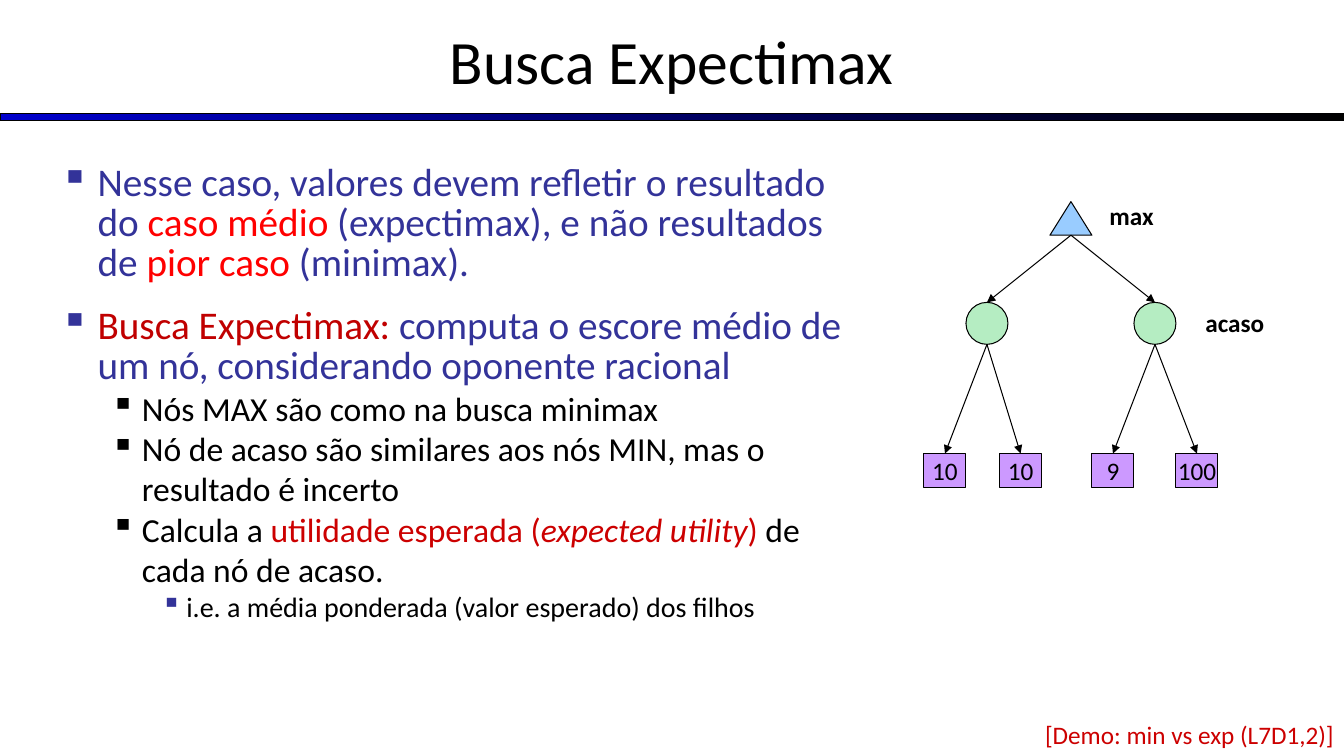
import pptx
import pptx.dml.color
import pptx.enum.dml
import pptx.enum.shapes
import pptx.enum.text
import pptx.oxml
import pptx.oxml.ns
import pptx.util

FONT = "Calibri"
BLACK, BLUE, RED, DARK_RED, CRIMSON = "000000", "333399", "FF0000", "C00000", "CC0000"
SHAPE = pptx.enum.shapes.MSO_SHAPE
ALIGN = pptx.enum.text.PP_ALIGN
ANCHOR = pptx.enum.text.MSO_ANCHOR

# The slide is a grid of 160 columns by 90 rows
COLUMNS, ROWS = 160, 90
NODE_WIDTH, NODE_HEIGHT = 5, 4
MAX_NODE = (125, 24)
CHANCE_ROW, LEAF_ROW = 36, 54
# Left column of each chance node, with its leaves as (left column, value)
CHANCE_NODES = [
    (115, [(110, "10"), (119, "10")]),
    (135, [(130, "9"), (140, "100")]),
]

# Indent, hanging and size of each list level
LEVELS = [(0.37, 0.37, 28), (0.81, 0.31, 24), (1.25, 0.25, 20)]
# Level, bullet colour, space before, spans of (text, colour, italic)
BODY = [
    (0, BLUE, 0, [
        ("Nesse caso, valores devem refletir o resultado do ", BLUE, False),
        ("caso médio", RED, False),
        (" (expectimax), e não resultados de ", BLUE, False),
        ("pior caso", RED, False),
        (" (minimax).", BLUE, False)]),
    (0, BLUE, 16.5, [
        ("Busca Expectimax:", DARK_RED, False),
        (" computa o escore médio de um nó, considerando oponente racional", BLUE, False)]),
    (1, BLACK, 0, [("Nós MAX são como na busca minimax", BLACK, False)]),
    (1, BLACK, 0, [
        ("Nó de acaso são similares aos nós MIN, mas o resultado é incerto", BLACK, False)]),
    (1, BLACK, 0, [
        ("Calcula a ", BLACK, False),
        ("utilidade esperada (", CRIMSON, False),
        ("expected utility", CRIMSON, True),
        (") ", CRIMSON, False),
        ("de cada nó de acaso.", BLACK, False)]),
    (2, BLUE, 0, [("i.e. a média ponderada (valor esperado) dos filhos", BLACK, False)]),
]


def grid(*cells):
    return [pptx.util.Inches(cell / 12) for cell in cells]


def rgb(value):
    return pptx.dml.color.RGBColor.from_string(value)


def add_xml(parent, tag, **attributes):
    element = pptx.oxml.parse_xml(f"<a:{tag} {pptx.oxml.ns.nsdecls('a')}/>")
    for name, value in attributes.items():
        element.set(name, value)
    parent.append(element)
    return element


def style(span, size, color, bold=False, italic=False):
    span.font.name = FONT
    span.font.size = pptx.util.Pt(size)
    span.font.bold = bold
    span.font.italic = italic
    span.font.color.rgb = rgb(color)


def write(frame, text, size, color=BLACK, align=ALIGN.CENTER, bold=False):
    frame.text = text
    frame.vertical_anchor = ANCHOR.MIDDLE
    para = frame.paragraphs[0]
    para.alignment = align
    style(para.runs[0], size, color, bold)


def add_text(page, area, text, size, **look):
    box = page.shapes.add_textbox(*grid(*area))
    box.text_frame.word_wrap = True
    write(box.text_frame, text, size, **look)


def add_outlined(page, kind, area, color=None):
    shape = page.shapes.add_shape(kind, *grid(*area))
    shape.shadow.inherit = False
    shape.line.color.rgb = rgb(BLACK)
    shape.line.width = pptx.util.Pt(0.75)
    if color:
        shape.fill.solid()
        shape.fill.fore_color.rgb = rgb(color)
    return shape


def add_rule(page):
    rule = add_outlined(page, SHAPE.RECTANGLE, (0, 13.5, COLUMNS, 0.9))
    rule.fill.gradient()
    rule.fill.gradient_angle = 0
    for stop, color in zip(rule.fill.gradient_stops, ("0000CC", BLACK)):
        stop.color.rgb = rgb(color)


def add_arrow(page, start, end):
    arrow = page.shapes.add_connector(
        pptx.enum.shapes.MSO_CONNECTOR.STRAIGHT, *grid(*start, *end))
    arrow.line.color.rgb = rgb(BLACK)
    arrow.line.width = pptx.util.Pt(0.75)
    properties = arrow.line._get_or_add_ln()
    add_xml(properties, "tailEnd", type="triangle")
    add_xml(properties.getparent(), "effectLst")


def add_leaf(page, column, value):
    area = (column, LEAF_ROW, NODE_WIDTH, NODE_HEIGHT)
    leaf = add_outlined(page, SHAPE.RECTANGLE, area, "CC99FF")
    write(leaf.text_frame, value, 18)
    leaf.text_frame.word_wrap = False


def add_body(page):
    frame = page.shapes.add_textbox(*grid(6, 19, 98, 64)).text_frame
    frame.word_wrap = True
    for index, (level, bullet, gap, spans) in enumerate(BODY):
        para = frame.add_paragraph() if index else frame.paragraphs[0]
        indent, hanging, size = LEVELS[level]
        para.level = level
        para.line_spacing = 1.0 if level else 0.85
        para.space_before = pptx.util.Pt(gap)
        properties = para._p.get_or_add_pPr()
        properties.set("marL", str(pptx.util.Inches(indent)))
        properties.set("indent", str(-pptx.util.Inches(hanging)))
        add_xml(add_xml(properties, "buClr"), "srgbClr", val=bullet)
        add_xml(properties, "buChar", char="▪")
        for text, color, italic in spans:
            span = para.add_run()
            span.text = text
            style(span, size, color, italic=italic)


def add_tree(page):
    middle = NODE_WIDTH / 2
    column, row = MAX_NODE
    add_outlined(page, SHAPE.ISOSCELES_TRIANGLE,
                 (column, row, NODE_WIDTH, NODE_HEIGHT), "99CCFF")
    root = (column + middle, row + NODE_HEIGHT)
    for chance, leaves in CHANCE_NODES:
        center = chance + middle
        add_arrow(page, root, (center, CHANCE_ROW))
        for leaf, value in leaves:
            add_arrow(page, (center, CHANCE_ROW + NODE_WIDTH), (leaf + middle, LEAF_ROW))
            add_leaf(page, leaf, value)
        add_outlined(page, SHAPE.OVAL,
                     (chance, CHANCE_ROW, NODE_WIDTH, NODE_WIDTH), "B5EDC2")
    add_text(page, (130.3, 23.2, 8.8, 4.8), "max", 18, bold=True)
    add_text(page, (140, CHANCE_ROW, 14, 4.8), "acaso", 18, bold=True)


def main():
    deck = pptx.Presentation()
    deck.slide_width, deck.slide_height = grid(COLUMNS, ROWS)
    page = deck.slides.add_slide(deck.slide_layouts[6])
    # Heading
    add_rule(page)
    add_text(page, (0, -0.4, COLUMNS, 15), "Busca Expectimax", 44)
    # Explanation and game tree
    add_body(page)
    add_tree(page)
    # Demo reference
    add_text(page, (107, 85, 53, 4.8), "[Demo: min vs exp (L7D1,2)]", 18,
             color=CRIMSON, align=ALIGN.RIGHT)
    deck.save("out.pptx")


if __name__ == "__main__":
    main()
